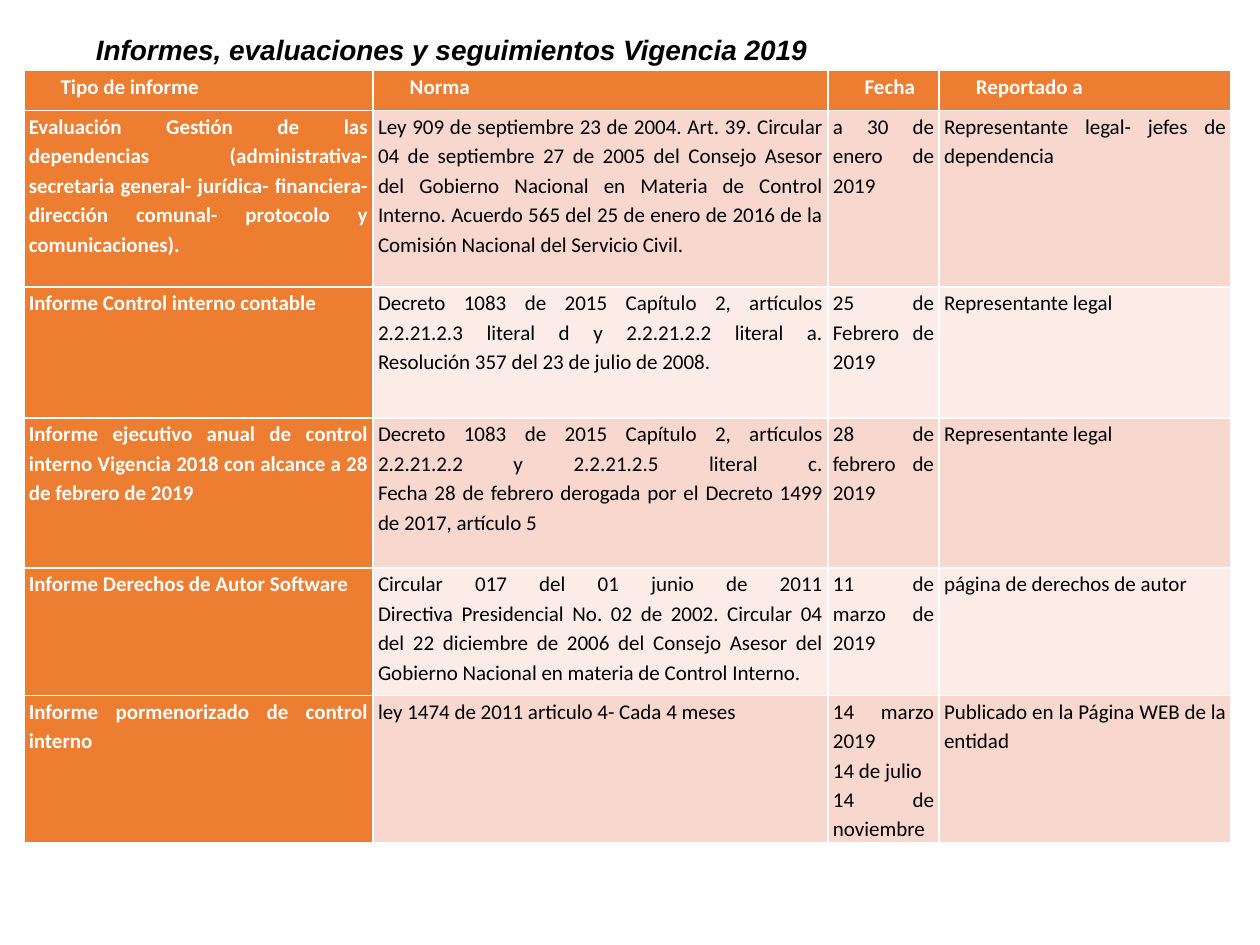
"""Builds the slide of reports, norms, dates and recipients for 2019."""
import dataclasses

import pptx
import pptx.dml.color
import pptx.enum.text
import pptx.util

Cm = pptx.util.Cm
Pt = pptx.util.Pt
ALIGN = pptx.enum.text.PP_ALIGN
ANCHOR = pptx.enum.text.MSO_ANCHOR
HUES = {"head": "ED7D31", "odd": "F8D7CE", "even": "FCECE8", "white": "FFFFFF", "black": "000000"}
WIDTHS = (7.04, 9.17, 2.24, 5.89)
HEADS = ("Tipo de informe", "Norma", "Fecha", "Reportado a")


@dataclasses.dataclass
class Report:
    height: float
    kind: str
    norm: str
    dates: str
    target: str


REPORTS = (
    Report(
        3.56,
        "Evaluación Gestión de las dependencias (administrativa-secretaria general- jurídica- "
        "financiera- dirección comunal- protocolo y comunicaciones).",
        "Ley 909 de septiembre 23 de 2004. Art. 39. Circular 04 de septiembre 27 de 2005 del "
        "Consejo Asesor del Gobierno Nacional en Materia de Control Interno. Acuerdo 565 del 25 "
        "de enero de 2016 de la Comisión Nacional del Servicio Civil.",
        "a 30 de enero de 2019",
        "Representante legal- jefes de dependencia",
    ),
    Report(
        2.64,
        "Informe Control interno contable",
        "Decreto 1083 de 2015 Capítulo 2, artículos 2.2.21.2.3 literal d y 2.2.21.2.2 literal a."
        "\vResolución 357 del 23 de julio de 2008.",
        "25 de Febrero de 2019",
        "Representante legal",
    ),
    Report(
        3.02,
        "Informe ejecutivo anual de control interno Vigencia 2018 con alcance a 28 de febrero de 2019",
        "Decreto 1083 de 2015 Capítulo 2, artículos 2.2.21.2.2 y 2.2.21.2.5 literal c."
        "\vFecha 28 de febrero derogada por el Decreto 1499 de 2017, artículo 5",
        "28 de febrero de 2019",
        "Representante legal",
    ),
    Report(
        2.57,
        "Informe Derechos de Autor Software",
        "Circular 017 del 01 junio de 2011\vDirectiva Presidencial No. 02 de 2002. Circular 04 "
        "del 22 diciembre de 2006 del Consejo Asesor del Gobierno Nacional en materia de Control "
        "Interno.",
        "11 de marzo de 2019",
        "página de derechos de autor",
    ),
    Report(
        1.88,
        "Informe pormenorizado de control interno",
        "ley 1474 de 2011 articulo 4- Cada 4 meses",
        "14 marzo 2019\n14 de julio\n14 de noviembre",
        "Publicado en la Página WEB de la entidad",
    ),
)


def tint(name: str) -> pptx.dml.color.RGBColor:
    return pptx.dml.color.RGBColor.from_string(HUES[name])


def add_run(para, text: str, face: str, size: float, hue: str, bold: bool, slant: bool = False) -> None:
    run = para.add_run()
    run.text = text
    font = run.font
    font.name, font.size, font.bold, font.italic = face, Pt(size), bold, slant
    font.color.rgb = tint(hue)


def fill_cell(cell, text: str, fill: str, bold: bool, indent: float = 0) -> None:
    cell.fill.solid()
    cell.fill.fore_color.rgb = tint(fill)
    cell.margin_left = cell.margin_right = Cm(0.1)
    cell.margin_top = cell.margin_bottom = 0
    frame = cell.text_frame
    for row, block in enumerate(text.split("\n")):
        para = frame.add_paragraph() if row else frame.paragraphs[0]
        para.alignment = ALIGN.JUSTIFY
        para.line_spacing = 1.15
        para._p.get_or_add_pPr().set("marL", str(Cm(indent)))
        for part, line in enumerate(block.split("\v")):
            if part:
                para.add_line_break()
            add_run(para, line, "Calibri", 12, "white" if bold else "black", bold)


def add_title(slide) -> None:
    title = slide.shapes.title
    title.left, title.top, title.width, title.height = Cm(0.48), Cm(0.36), Cm(17.25), Cm(1.35)
    frame = title.text_frame
    frame.auto_size = pptx.enum.text.MSO_AUTO_SIZE.NONE
    frame.vertical_anchor = ANCHOR.MIDDLE
    para = frame.paragraphs[0]
    para.alignment = ALIGN.CENTER
    para.line_spacing = 0.9
    add_run(para, "Informes, evaluaciones y seguimientos Vigencia 2019", "Arial", 16, "black", True, True)


def add_grid(slide) -> None:
    heights = (0.81, *(item.height for item in REPORTS))
    table = slide.shapes.add_table(
        len(heights), len(WIDTHS), Cm(0.48), Cm(1.42), Cm(sum(WIDTHS)), Cm(sum(heights))
    ).table
    for col, width in zip(table.columns, WIDTHS):
        col.width = Cm(width)
    for row, height in zip(table.rows, heights):
        row.height = Cm(height)
    for col, text in enumerate(HEADS):
        fill_cell(table.cell(0, col), text, "head", True, 0.64)
    for row, item in enumerate(REPORTS, 1):
        band = "odd" if row % 2 else "even"
        fill_cell(table.cell(row, 0), item.kind, "head", True)
        for col, text in enumerate((item.norm, item.dates, item.target), 1):
            fill_cell(table.cell(row, col), text, band, False)


def main() -> None:
    deck = pptx.Presentation()
    deck.slide_width, deck.slide_height = Cm(25.4), Cm(19.05)
    slide = deck.slides.add_slide(deck.slide_layouts[5])
    add_title(slide)
    add_grid(slide)
    deck.save("out.pptx")


if __name__ == "__main__":
    main()
